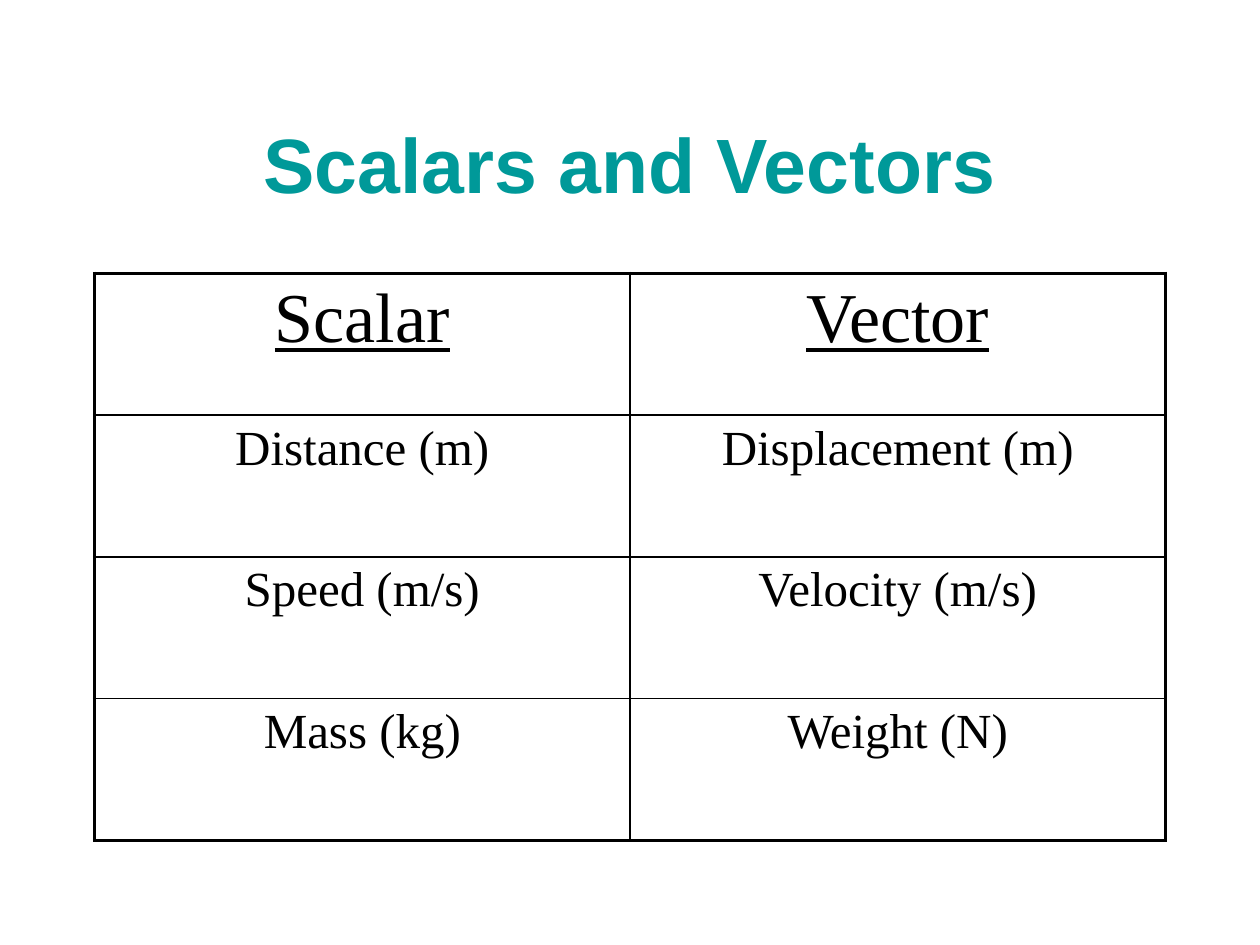
from lxml.etree import SubElement
from pptx import Presentation
from pptx.dml.color import RGBColor
from pptx.enum.text import MSO_ANCHOR, PP_ALIGN
from pptx.oxml.ns import qn
from pptx.util import Inches, Pt

ROWS = [
    ("Scalar", "Vector"),
    ("Distance (m)", "Displacement (m)"),
    ("Speed (m/s)", "Velocity (m/s)"),
    ("Mass (kg)", "Weight (N)"),
]
TITLE = {"name": "Arial", "size": Pt(44), "bold": True}
HEAD = {"name": "Times New Roman", "size": Pt(40), "underline": True}
BODY = {"name": "Times New Roman", "size": Pt(28)}
THICK, THIN = 2.25, 1


def color(code):
    return RGBColor.from_string(code)


def write(frame, text, style, code):
    para = frame.paragraphs[0]
    para.alignment = PP_ALIGN.CENTER
    run = para.add_run()
    run.text = text
    for key, value in style.items():
        setattr(run.font, key, value)
    run.font.color.rgb = color(code)


def border(cell, side, width):
    props = cell._tc.get_or_add_tcPr()
    line = SubElement(props, qn(f"a:ln{side}"), w=str(Pt(width)))
    fill = SubElement(line, qn("a:solidFill"))
    SubElement(fill, qn("a:srgbClr"), val="000000")


def add_title(slide, text):
    title = slide.shapes.title
    title.left, title.top = Inches(0.75), Inches(0.67)
    title.width, title.height = Inches(8.5), Inches(1.25)
    title.text_frame.vertical_anchor = MSO_ANCHOR.MIDDLE
    write(title.text_frame, text, TITLE, "009999")


def add_grid(slide, rows):
    """Add a table with a thick outer frame and thin inner lines."""
    high, wide = len(rows), len(rows[0])
    table = slide.shapes.add_table(
        high, wide, Inches(0.75), Inches(2.17), Inches(8.5), Inches(4.5)
    ).table
    table.first_row = table.horz_banding = False
    for r, texts in enumerate(rows):
        for c, text in enumerate(texts):
            cell = table.cell(r, c)
            write(cell.text_frame, text, BODY if r else HEAD, "000000")
            edges = {"L": c == 0, "R": c == wide - 1,
                     "T": r == 0, "B": r == high - 1}
            for side, outer in edges.items():
                border(cell, side, THICK if outer else THIN)
            cell.fill.background()


def main():
    deck = Presentation()
    deck.slide_width, deck.slide_height = Inches(10), Inches(7.5)
    slide = deck.slides.add_slide(deck.slide_layouts[5])
    add_title(slide, "Scalars and Vectors")
    add_grid(slide, ROWS)
    deck.save("out.pptx")


if __name__ == "__main__":
    main()
